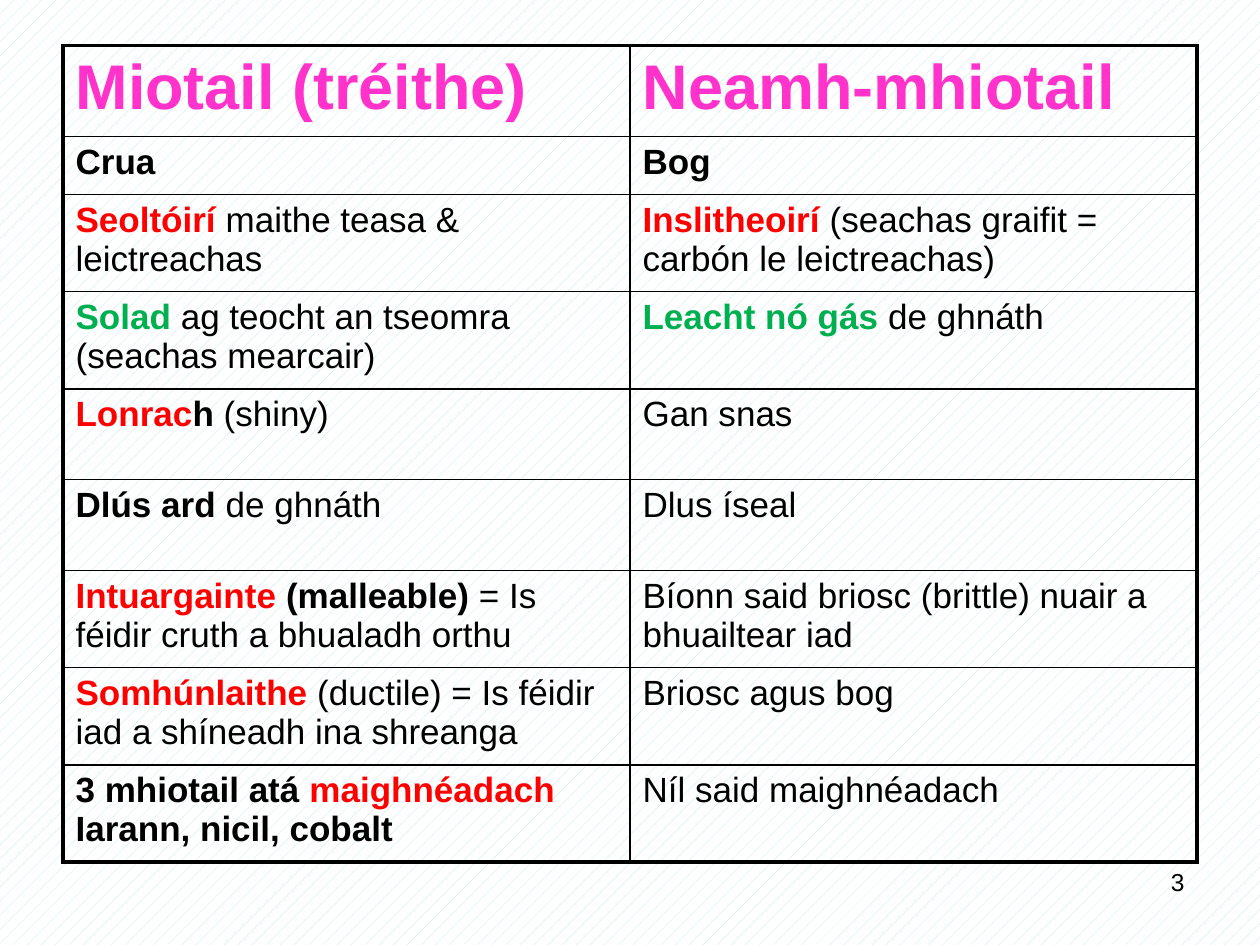
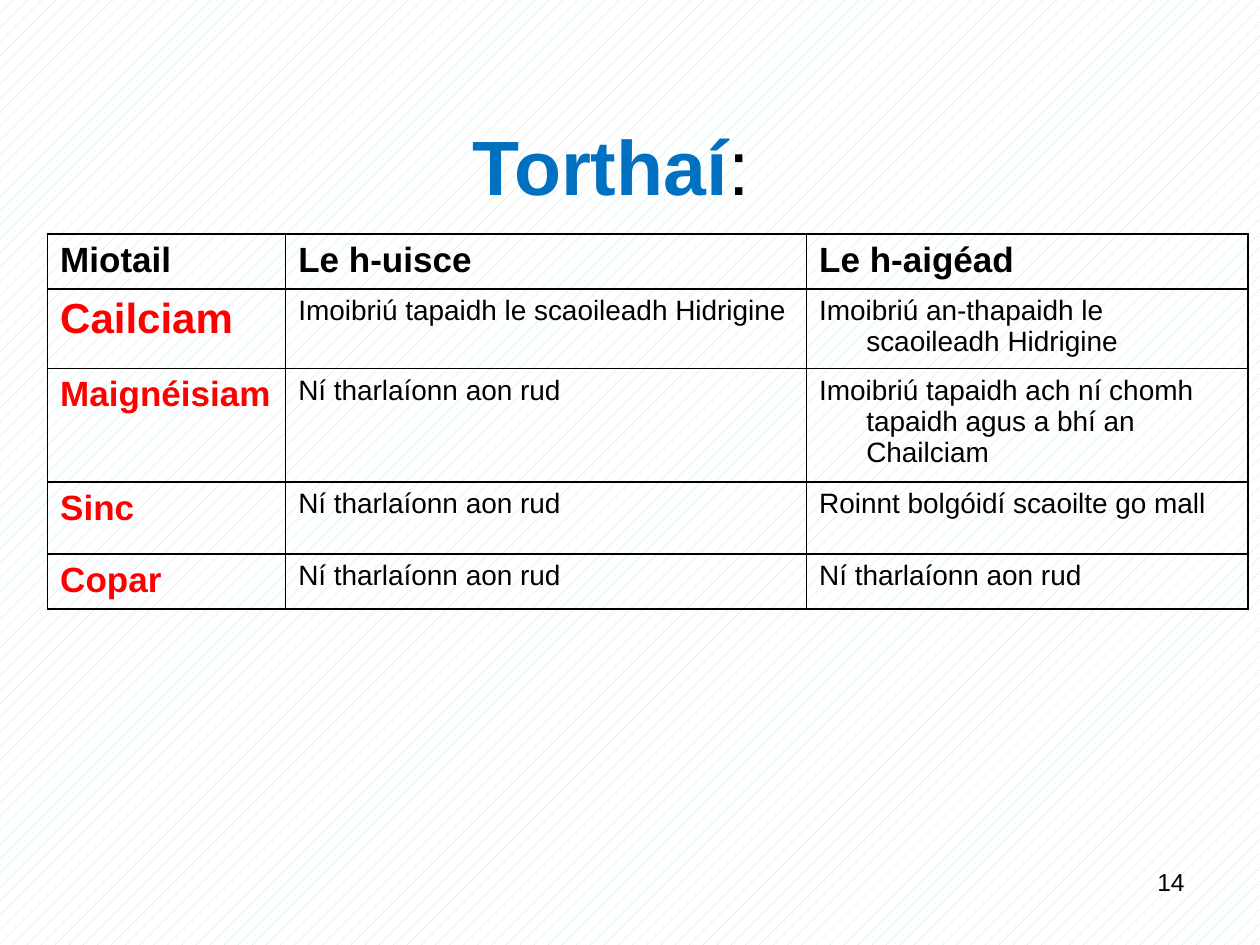
from pptx import Presentation
from pptx.dml.color import RGBColor
from pptx.enum.dml import MSO_PATTERN
from pptx.enum.text import MSO_ANCHOR, PP_ALIGN
from pptx.oxml.ns import qn
from pptx.util import Cm, Pt
from lxml import etree

PATTERN = MSO_PATTERN.PERCENT_10
MIDDLE = MSO_ANCHOR.MIDDLE
CENTER, RIGHT = PP_ALIGN.CENTER, PP_ALIGN.RIGHT
TITLE_ONLY, BLANK = 5, 6
FONT = "Arial"
COLORS = {"black": "000000", "white": "FFFFFF", "tint": "BBE0E3", "pink": "FF33CC",
          "red": "FF0000", "green": "00B050", "blue": "0070C0"}

# Run styles: colour, bold
STYLES = {"plain": ("black", False), "bold": ("black", True), "red": ("red", True),
          "green": ("green", True), "blue": ("blue", True), "pink": ("pink", True)}

# Content: a cell is a list of (text, style) runs
PROPERTIES = [
    ([("Miotail (tréithe)", "pink")], [("Neamh-mhiotail", "pink")]),
    ([("Crua", "bold")], [("Bog", "bold")]),
    ([("Seoltóirí ", "red"), ("maithe teasa & leictreachas", "plain")],
     [("Inslitheoirí ", "red"), ("(seachas graifit = carbón le leictreachas)", "plain")]),
    ([("Solad ", "green"), ("ag teocht an tseomra (seachas mearcair)", "plain")],
     [("Leacht nó gás ", "green"), ("de ghnáth", "plain")]),
    ([("Lonrac", "red"), ("h ", "bold"), ("(shiny)", "plain")],
     [("Gan snas", "plain")]),
    ([("Dlús ard ", "bold"), ("de ghnáth", "plain")],
     [("Dlus íseal", "plain")]),
    ([("Intuargainte", "red"), (" (malleable) ", "bold"),
      ("= Is féidir cruth a bhualadh orthu", "plain")],
     [("Bíonn said briosc (brittle) nuair a bhuailtear iad", "plain")]),
    ([("Somhúnlaithe", "red"),
      (" (ductile) = Is féidir iad a shíneadh ina shreanga", "plain")],
     [("Briosc agus bog", "plain")]),
    ([("3 mhiotail atá ", "bold"), ("maighnéadach ", "red"),
      ("Iarann, nicil, cobalt", "bold")],
     [("Níl said maighnéadach", "plain")]),
]
PROPERTY_ROWS = [1.83, 1.17, 1.96, 1.96, 1.83, 1.83, 1.96, 1.96, 1.96]

TITLE = [("Torthaí", "blue"), (":", "plain")]
RESULT_HEADS = ["Miotail", "Le h-uisce", "Le h-aigéad"]
NOTHING = "Ní tharlaíonn aon rud"
RESULTS = [
    ("Cailciam", "Imoibriú tapaidh le scaoileadh Hidrigine",
     "Imoibriú an-thapaidh le scaoileadh Hidrigine"),
    ("Maignéisiam", NOTHING,
     "Imoibriú tapaidh ach ní chomh tapaidh agus a bhí an Chailciam"),
    ("Sinc", NOTHING, "Roinnt bolgóidí scaoilte go mall"),
    ("Copar", NOTHING, NOTHING),
]
RESULT_ROWS = [1.09, 1.6, 2.29, 1.45, 1.09]


def rgb(name):
    return RGBColor.from_string(COLORS[name])


def write(p, runs, size):
    p.font.name, p.font.size = FONT, Pt(size)
    for text, style in runs:
        color, bold = STYLES[style]
        r = p.add_run()
        r.text = text
        r.font.name, r.font.size = FONT, Pt(size)
        r.font.bold = bold
        r.font.color.rgb = rgb(color)


def add_slide(prs, layout, number):
    s = prs.slides.add_slide(prs.slide_layouts[layout])
    fill = s.background.fill
    fill.patterned()
    fill.pattern = PATTERN
    fill.fore_color.rgb, fill.back_color.rgb = rgb("tint"), rgb("white")
    # Slide number
    tf = s.shapes.add_textbox(Cm(18.21), Cm(17.35), Cm(5.92), Cm(1.32)).text_frame
    tf.word_wrap = True
    p = tf.paragraphs[0]
    p.alignment = RIGHT
    write(p, [(str(number), "plain")], 14)
    return s


def set_borders(cell, widths):
    tcPr = cell._tc.get_or_add_tcPr()
    for side, width in zip("LRTB", widths):
        ln = etree.SubElement(tcPr, qn(f"a:ln{side}"), w=str(Pt(width)))
        fill = etree.SubElement(ln, qn("a:solidFill"))
        etree.SubElement(fill, qn("a:srgbClr"), val=COLORS["black"])


def add_grid(s, left, top, col_widths, row_heights, cells, size_at, outer, shape_p):
    """Draw a table of runs with thin inner lines and an outer frame."""
    n_rows, n_cols = len(row_heights), len(col_widths)
    table = s.shapes.add_table(n_rows, n_cols, Cm(left), Cm(top),
                               Cm(sum(col_widths)), Cm(sum(row_heights))).table
    table.first_row = table.horz_banding = False
    for column, width in zip(table.columns, col_widths):
        column.width = Cm(width)
    for i, height in enumerate(row_heights):
        table.rows[i].height = Cm(height)
        for j, runs in enumerate(cells[i]):
            cell = table.cell(i, j)
            edges = (j == 0, j == n_cols - 1, i == 0, i == n_rows - 1)
            set_borders(cell, [outer if edge else 1 for edge in edges])
            cell.fill.background()
            p = cell.text_frame.paragraphs[0]
            shape_p(p._p.get_or_add_pPr())
            write(p, runs, size_at(i, j))


def space_before(pPr):
    spacing = etree.SubElement(pPr, qn("a:spcBef"))
    etree.SubElement(spacing, qn("a:spcPct"), val="20000")


def hang(pPr):
    pPr.set("marL", str(Cm(0.95)))
    pPr.set("indent", str(-Cm(0.95)))


def properties_slide(prs):
    s = add_slide(prs, BLANK, 3)
    add_grid(s, 1.27, 0.92, [11.43, 11.43], PROPERTY_ROWS, PROPERTIES,
             lambda i, j: 36 if i == 0 else 20, 2.25, space_before)


def results_slide(prs):
    s = add_slide(prs, TITLE_ONLY, 14)
    title = s.shapes.title
    title.left, title.top, title.width, title.height = Cm(0.89), Cm(1.73), Cm(22.86), Cm(3.18)
    tf = title.text_frame
    tf.vertical_anchor = MIDDLE
    tf.paragraphs[0].alignment = CENTER
    write(tf.paragraphs[0], TITLE, 44)

    cells = [[[(head, "bold")] for head in RESULT_HEADS]]
    cells += [[[(metal, "red")], [(water, "plain")], [(acid, "plain")]]
              for metal, water, acid in RESULTS]

    def size_at(i, j):
        if (i, j) == (1, 0):
            return 24
        return 20 if i == 0 or j == 0 else 16

    add_grid(s, 0.96, 4.72, [4.8, 10.5, 8.9], RESULT_ROWS, cells, size_at, 1, hang)


def main():
    prs = Presentation()
    prs.slide_width, prs.slide_height = Cm(25.4), Cm(19.05)
    properties_slide(prs)
    results_slide(prs)
    prs.save("out.pptx")


if __name__ == "__main__":
    main()
